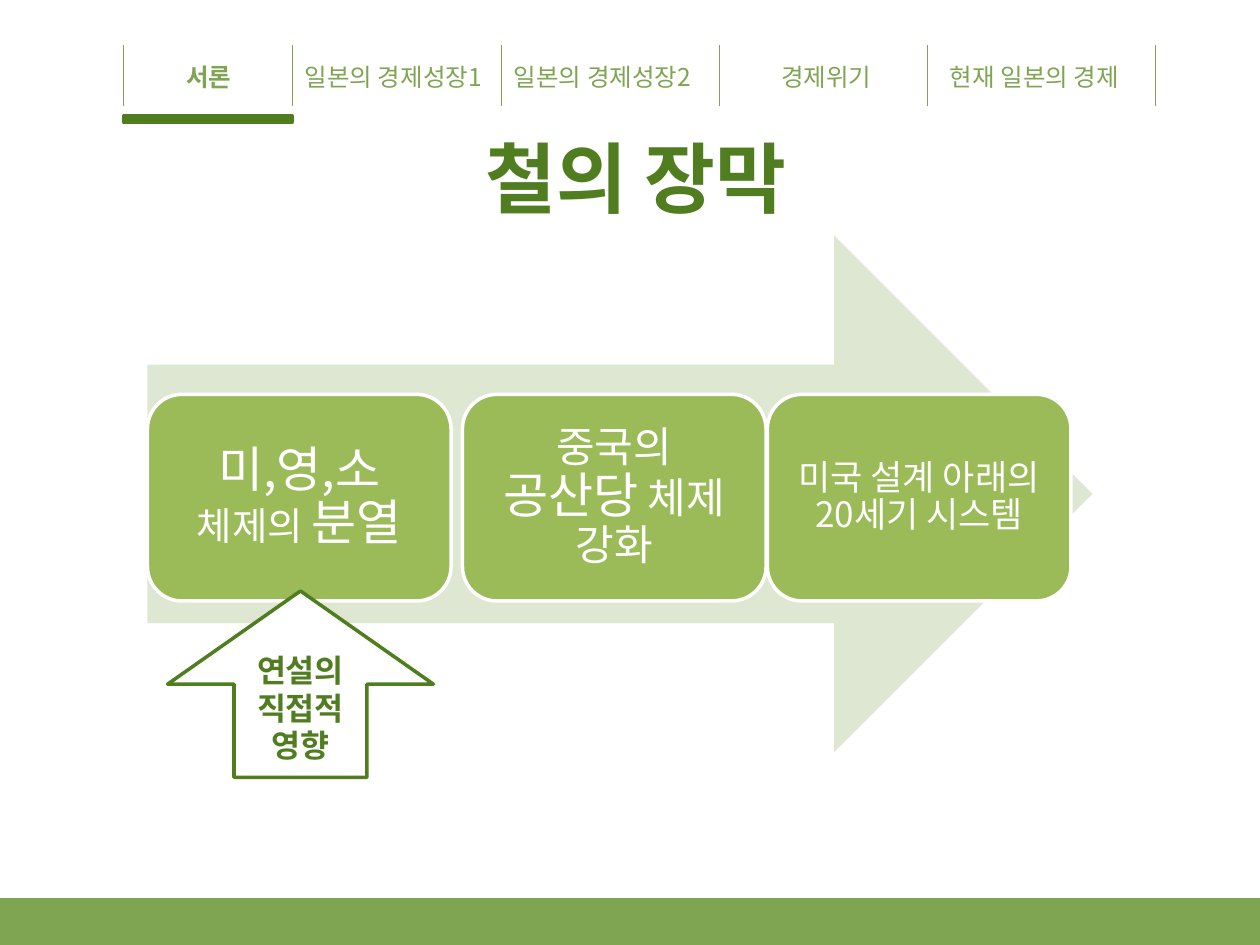
from pptx import Presentation
from pptx.util import Inches, Pt
from pptx.dml.color import RGBColor
from pptx.enum.shapes import MSO_SHAPE as SHAPE, MSO_CONNECTOR as LINK
from pptx.enum.text import PP_ALIGN as ALIGN, MSO_ANCHOR as ANCHOR, MSO_AUTO_SIZE as FIT
from pptx.oxml.ns import qn
from lxml.etree import SubElement, Element

GREEN = RGBColor(0x7F, 0xA4, 0x52)
DARK = RGBColor(0x51, 0x7D, 0x21)
LEAF = RGBColor(0x9B, 0xBB, 0x59)
PALE = RGBColor(0xDE, 0xE7, 0xD1)
WHITE = RGBColor(0xFF, 0xFF, 0xFF)
FONT = "Noto Sans CJK KR"

TITLE = "철의 장막"
TABS = [
    ("서론", 1.38, 0.59),
    ("일본의 경제성장1", 2.32, 1.76),
    ("일본의 경제성장2", 3.98, 1.76),
    ("경제위기", 6.1, 0.99),
    ("현재 일본의 경제", 7.44, 1.71),
]
RULES = [0.98, 2.32, 3.98, 5.71, 7.36, 9.17]
CARDS = [
    (1.17, 0.12, [("미,영,소 ", 28), ("체제의 ", 22), ("분열", 28)]),
    (3.67, 0.1, [("중국의 ", 24), ("공산당", 28), (" 체제 강화", 24)]),
    (6.09, 0.08, [("미국 설계 아래의 20세기 시스템", 20)]),
]
CAUSE = ["연설의", "직접적영향"]


def add_run(para, text, size, color, bold=False):
    run = para.add_run()
    run.text = text
    look = {"name": FONT, "size": Pt(size), "bold": bold}
    for key, value in look.items():
        setattr(run.font, key, value)
    run.font.color.rgb = color
    SubElement(run.font._element, qn("a:ea")).set("typeface", FONT)
    return run


def add_form(slide, kind, box, fill, line=None):
    form = slide.shapes.add_shape(kind, *map(Inches, box))
    form.shadow.inherit = False
    form.fill.solid()
    form.fill.fore_color.rgb = fill
    if line is None:
        form.line.fill.background()
    else:
        form.line.color.rgb = line
        form.line.width = Pt(2)
    return form


def set_frame(frame, pad=None, **look):
    for key, value in look.items():
        setattr(frame, key, value)
    if pad is not None:
        for side in ("left", "right", "top", "bottom"):
            setattr(frame, "margin_" + side, Inches(pad))


def add_tabs(slide):
    for x in RULES:
        ends = map(Inches, (x, 0.36, x, 0.84))
        rule = slide.shapes.add_connector(LINK.STRAIGHT, *ends)
        rule.line.color.rgb = GREEN
        rule.line.width = Pt(0.75)
        SubElement(rule._element.spPr, qn("a:effectLst"))
    for i, (text, x, width) in enumerate(TABS):
        box = slide.shapes.add_textbox(*map(Inches, (x, 0.44, width, 0.34)))
        set_frame(box.text_frame, word_wrap=False, auto_size=FIT.SHAPE_TO_FIT_TEXT)
        add_run(box.text_frame.paragraphs[0], text, 14, GREEN, i == 0)
    mark = (RULES[0], 0.92, RULES[1] - RULES[0], 0.05)
    add_form(slide, SHAPE.RECTANGLE, mark, DARK, DARK)


def add_title(slide):
    title = slide.shapes.title
    place = {"left": 0.55, "top": 0.78, "width": 9, "height": 1.25}
    for key, value in place.items():
        setattr(title, key, Inches(value))
    set_frame(title.text_frame, vertical_anchor=ANCHOR.MIDDLE)
    para = title.text_frame.paragraphs[0]
    para.alignment = ALIGN.CENTER
    run = add_run(para, TITLE, 44, DARK, True)
    edge = Element(qn("a:ln"), w=str(Pt(1.4)))
    paint = SubElement(edge, qn("a:solidFill"))
    SubElement(paint, qn("a:srgbClr")).set("val", str(WHITE))
    run.font._element.insert(0, edge)


def add_flow(slide):
    add_form(slide, SHAPE.RIGHT_ARROW, (1.17, 1.87, 7.5, 4.1), PALE)
    for x, pad, runs in CARDS:
        box = (x, 3.13, 2.41, 1.64)
        card = add_form(slide, SHAPE.ROUNDED_RECTANGLE, box, LEAF, WHITE)
        frame = card.text_frame
        set_frame(frame, pad, word_wrap=True, vertical_anchor=ANCHOR.MIDDLE)
        para = frame.paragraphs[0]
        para.alignment = ALIGN.CENTER
        para.line_spacing = 0.9
        for text, size in runs:
            add_run(para, text, size, WHITE)


def add_cause(slide):
    arrow = add_form(slide, SHAPE.UP_ARROW, (1.33, 4.69, 2.11, 1.48), WHITE, DARK)
    frame = arrow.text_frame
    set_frame(frame, word_wrap=True, vertical_anchor=ANCHOR.MIDDLE)
    for i, text in enumerate(CAUSE):
        para = frame.add_paragraph() if i else frame.paragraphs[0]
        para.alignment = ALIGN.CENTER
        add_run(para, text, 18, DARK, True)


def main():
    deck = Presentation()
    deck.slide_width, deck.slide_height = Inches(10), Inches(7.5)
    slide = deck.slides.add_slide(deck.slide_layouts[5])
    add_form(slide, SHAPE.RECTANGLE, (0, 7.14, 10, 0.36), GREEN, GREEN)
    add_tabs(slide)
    add_title(slide)
    add_flow(slide)
    add_cause(slide)
    deck.save("out.pptx")


if __name__ == "__main__":
    main()
